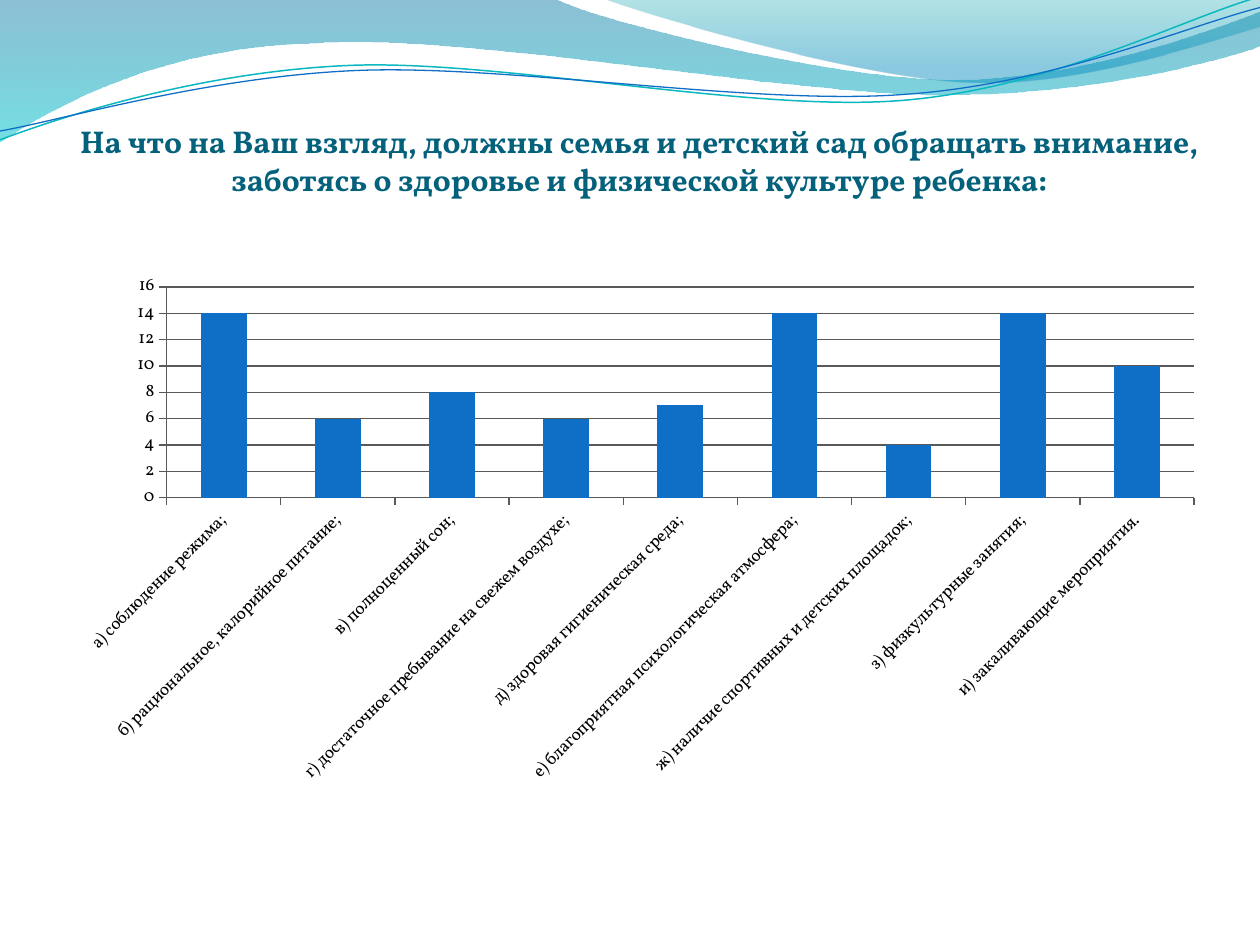
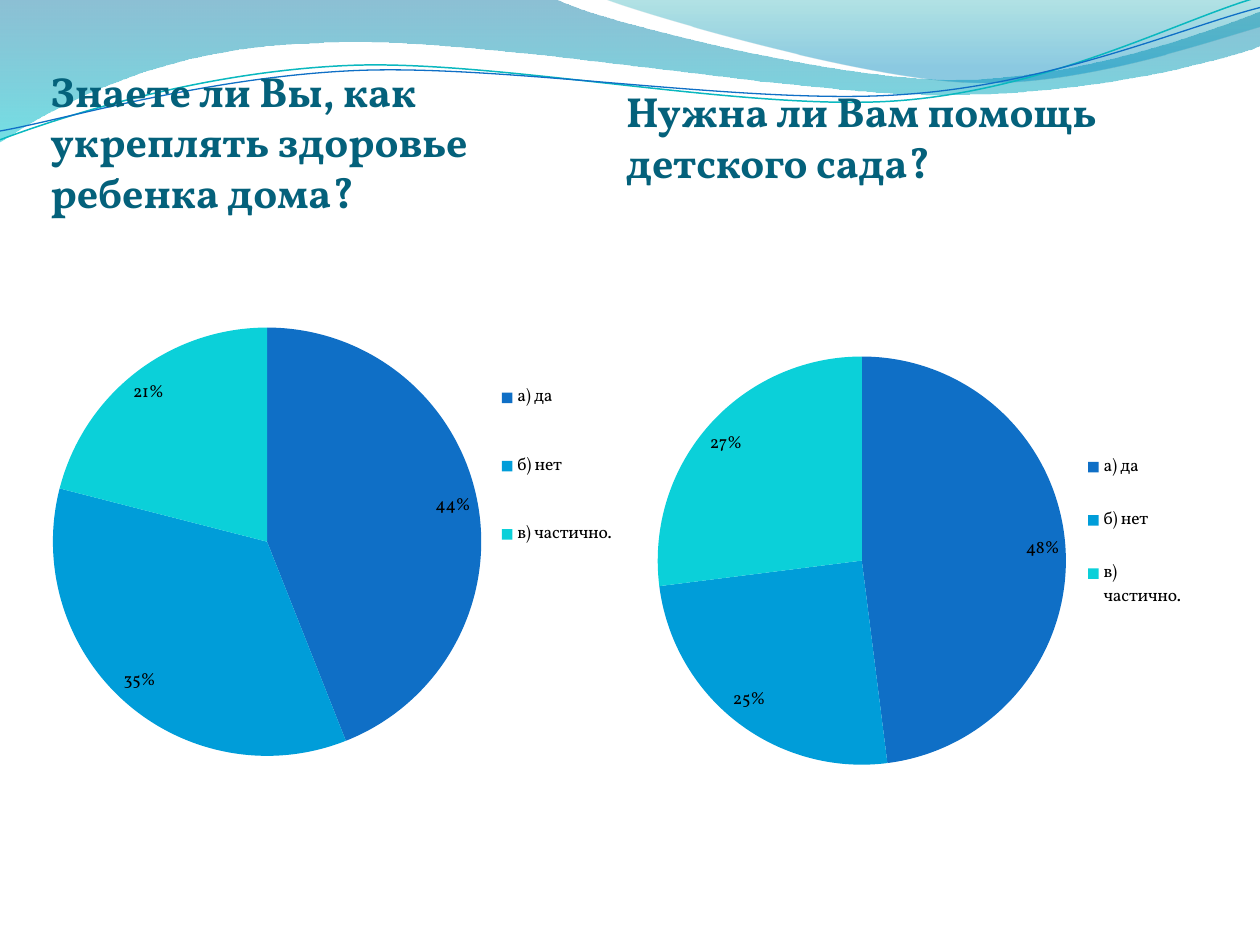
from lxml import etree
from pptx import Presentation
from pptx.chart.data import CategoryChartData
from pptx.dml.color import RGBColor
from pptx.enum.chart import XL_CHART_TYPE as ChartType
from pptx.enum.chart import XL_LEGEND_POSITION as LegendPosition
from pptx.enum.chart import XL_TICK_MARK as TickMark
from pptx.enum.text import MSO_ANCHOR as Anchor
from pptx.enum.text import MSO_AUTO_SIZE as AutoSize
from pptx.enum.text import PP_ALIGN as Align
from pptx.oxml.ns import qn
from pptx.util import Inches, Pt

FONT = "Vollkorn"
COLORS = {
    "title": "04617B", "text": "000000", "grid": "595959",
    "blue": "0F6FC6", "sky": "009DD9", "turquoise": "0BD0D9",
    "wave line": "0AB8BF",
    "band top": "0074A1", "band bottom": "00C6CF",
    "corner top": "00A1A9", "corner bottom": "008BBF",
}
TITLE_LAYOUT = 5
MASTER_WAVE_ID = 20

# Each outline step is a point (x, y) or a curve (two control points and an end).
BAND = [
    (0, 0), (4.4, -0.01), (4.76, 0.17, 6.64, 0.63, 7.58, 0.63),
    (8.53, 0.63, 9.58, 0.26, 10, 0.09), (10.01, 0.36),
    (9.83, 0.44, 8.7, 0.76, 7.46, 0.75), (6.22, 0.75, 3.82, 0.28, 2.57, 0.34),
    (1.29, 0.36, 0.46, 0.83, -0.01, 1.13),
]
CORNER = [
    (4.79, -0.01), (5.09, 0.11, 6.82, 0.62, 7.69, 0.65),
    (8.56, 0.69, 9.61, 0.32, 10, 0.21), (10, 0),
]
UPPER_LINE = [
    (0, 1.11), (0.48, 0.93, 1.58, 0.57, 2.77, 0.52),
    (3.95, 0.47, 5.93, 0.89, 7.13, 0.8), (8.33, 0.71, 9.38, 0.15, 9.98, -0.02),
]
LOWER_LINE = [
    (0, 1.04), (0.47, 0.96, 1.64, 0.61, 2.83, 0.56),
    (4.03, 0.51, 5.97, 0.84, 7.17, 0.75), (8.36, 0.67, 9.41, 0.21, 10, 0.06),
]

HEALTH_FACTORS = {
    "а) соблюдение режима;": 14,
    "б) рациональное, калорийное питание;": 6,
    "в) полноценный сон;": 8,
    "г) достаточное пребывание на свежем воздухе;": 6,
    "д) здоровая гигиеническая среда;": 7,
    "е) благоприятная психологическая атмосфера;": 14,
    "ж) наличие спортивных и детских площадок;": 4,
    "з) физкультурные занятия;": 14,
    "и) закаливающие мероприятия.": 10,
}
ANSWERS = ["а) да", "б) нет", "в) частично."]


def rgb(name):
    return RGBColor.from_string(COLORS[name])


def set_values(target, values):
    for name, value in values.items():
        setattr(target, name, value)


def add_outline(slide, steps, close):
    """Build a freeform through the step ends, then bend its curved segments."""
    start, *ends = [(Inches(step[-2]), Inches(step[-1])) for step in steps]
    builder = slide.shapes.build_freeform(*start)
    builder.add_line_segments(ends, close=close)
    shape = builder.convert_to_shape()
    shape.shadow.inherit = False
    segments = list(shape.element.iter(qn("a:lnTo")))
    for segment, step in zip(segments, steps[1:]):
        if len(step) == 2:
            continue
        segment.tag = qn("a:cubicBezTo")
        for index, (x, y) in enumerate((step[:2], step[2:4])):
            control = etree.Element(qn("a:pt"))
            control.set("x", str(Inches(x) - shape.left))
            control.set("y", str(Inches(y) - shape.top))
            segment.insert(index, control)
    return shape


def add_wave_band(slide, steps, stops):
    """Stops are (position, colour, opacity in percent), from top to bottom."""
    shape = add_outline(slide, steps, close=True)
    shape.line.fill.background()
    shape.fill.gradient()
    shape.fill.gradient_angle = 270
    for stop, (position, color, _) in zip(shape.fill.gradient_stops, stops):
        stop.position = position
        stop.color.rgb = rgb(color)
    for color, (_, _, opacity) in zip(shape.element.iter(qn("a:srgbClr")), stops):
        etree.SubElement(color, qn("a:alpha")).set("val", str(opacity * 1000))
    return shape


def add_wave_line(slide, steps, color, width):
    shape = add_outline(slide, steps, close=False)
    shape.fill.background()
    shape.line.color.rgb = rgb(color)
    shape.line.width = Pt(width)
    return shape


def put_waves_on_master(presentation, slide):
    waves = [
        add_wave_band(slide, BAND, [(0, "band top", 45), (1, "band bottom", 55)]),
        add_wave_band(slide, CORNER, [(0, "corner top", 30), (0.8, "corner bottom", 45)]),
        add_wave_line(slide, UPPER_LINE, "wave line", 0.85),
        add_wave_line(slide, LOWER_LINE, "blue", 0.75),
    ]
    tree = presentation.slide_master.shapes.element
    for index, wave in enumerate(waves):
        wave.element.nvSpPr.cNvPr.set("id", str(MASTER_WAVE_ID + index))
        tree.insert(2 + index, wave.element)


def format_heading(shape, text, box, size, align=Align.LEFT, anchor=Anchor.MIDDLE):
    places = map(Inches, box)
    set_values(shape, dict(zip(("left", "top", "width", "height"), places)))
    frame = shape.text_frame
    frame.text = text
    set_values(frame, {
        "word_wrap": True, "auto_size": AutoSize.NONE, "vertical_anchor": anchor,
        "margin_left": Inches(0.05), "margin_right": Inches(0.05),
        "margin_top": 0, "margin_bottom": 0,
    })
    paragraph = frame.paragraphs[0]
    paragraph.alignment = align
    font = paragraph.runs[0].font
    set_values(font, {"name": FONT, "size": Pt(size), "bold": True})
    font.color.rgb = rgb("title")


def place_part(part, index, box, frame_box, inner=False):
    """Fix a chart part at box, given in inches on the slide."""
    layout = part.find(qn("c:layout"))
    if layout is not None:
        part.remove(layout)
    layout = etree.Element(qn("c:layout"))
    part.insert(index, layout)
    manual = etree.SubElement(layout, qn("c:manualLayout"))
    left, top, width, height = box
    frame_left, frame_top, frame_width, frame_height = frame_box
    values = {"layoutTarget": "inner"} if inner else {}
    values |= {
        "xMode": "edge", "yMode": "edge",
        "x": (left - frame_left) / frame_width, "y": (top - frame_top) / frame_height,
        "w": width / frame_width, "h": height / frame_height,
    }
    for name, value in values.items():
        etree.SubElement(manual, qn(f"c:{name}")).set("val", str(value))


def add_chart(slide, kind, box, categories, values):
    data = CategoryChartData()
    data.categories = categories
    data.add_series("Series 1", values)
    chart = slide.shapes.add_chart(kind, *map(Inches, box), data).chart
    set_values(chart, {"has_title": False, "has_legend": False})
    set_values(chart.font, {"name": FONT, "size": Pt(10)})
    chart.font.color.rgb = rgb("text")
    return chart


def add_column_chart(slide, box, scores):
    chart = add_chart(slide, ChartType.COLUMN_CLUSTERED, box,
                      scores.keys(), scores.values())
    plot = chart.plots[0]
    set_values(plot, {"gap_width": 150, "vary_by_categories": False})
    fill = plot.series[0].format.fill
    fill.solid()
    fill.fore_color.rgb = rgb("blue")

    names, scale = chart.category_axis, chart.value_axis
    scale.has_major_gridlines = True
    for axis in (names, scale):
        axis.major_tick_mark = TickMark.OUTSIDE
    for part in (names, scale, scale.major_gridlines):
        part.format.line.color.rgb = rgb("grid")
        part.format.line.width = Pt(0.75)


def add_answer_pie(slide, box, plot_box, legend_box, shares):
    chart = add_chart(slide, ChartType.PIE, box, ANSWERS, shares)
    plot = chart.plots[0]
    plot.vary_by_categories = True
    for index, color in enumerate(("blue", "sky", "turquoise")):
        fill = plot.series[0].points[index].format.fill
        fill.solid()
        fill.fore_color.rgb = rgb(color)
    plot.has_data_labels = True
    set_values(plot.data_labels, {
        "show_percentage": True, "show_value": False, "number_format": "0%",
        "number_format_is_linked": False, "position": None,
    })
    chart.has_legend = True
    set_values(chart.legend, {"position": LegendPosition.RIGHT, "include_in_layout": False})
    plot_area, legend = (chart.element.find(f".//{qn(name)}")
                         for name in ("c:plotArea", "c:legend"))
    place_part(plot_area, 0, plot_box, box, inner=True)
    place_part(legend, 1, legend_box, box)


def build_health_slide(slide):
    format_heading(
        slide.shapes.title,
        "На что на Ваш взгляд, должны семья и детский сад обращать внимание, "
        "заботясь о здоровье и физической культуре ребенка:",
        (0.35, 0.6, 9.45, 1.34), 18, Align.CENTER)
    add_column_chart(slide, (0.51, 2.1, 9.15, 4.21), HEALTH_FACTORS)


def build_answers_slide(slide):
    format_heading(slide.shapes.title, "Знаете ли Вы, как укреплять здоровье ребенка дома?",
                   (0.35, 0.76, 4.42, 0.72), 24)
    help_box = (4.92, 0.68, 4.42, 1.18)
    help_heading = slide.shapes.add_textbox(*map(Inches, help_box))
    format_heading(help_heading, "Нужна ли Вам помощь детского сада?", help_box, 24,
                   anchor=Anchor.TOP)
    add_answer_pie(slide, (0.28, 1.78, 4.72, 5.04), (0.42, 2.6, 3.4, 3.4),
                   (3.91, 2.71, 1.02, 1.98), (44, 35, 21))
    add_answer_pie(slide, (5.08, 1.94, 4.42, 5.02), (5.22, 2.83, 3.24, 3.24),
                   (8.58, 3.38, 0.85, 1.69), (48, 25, 27))


def main():
    presentation = Presentation()
    set_values(presentation, {"slide_width": Inches(10), "slide_height": Inches(7.5)})
    layout = presentation.slide_layouts[TITLE_LAYOUT]
    health, answers = (presentation.slides.add_slide(layout) for _ in range(2))
    put_waves_on_master(presentation, health)
    build_health_slide(health)
    build_answers_slide(answers)
    presentation.save("out.pptx")


if __name__ == "__main__":
    main()
